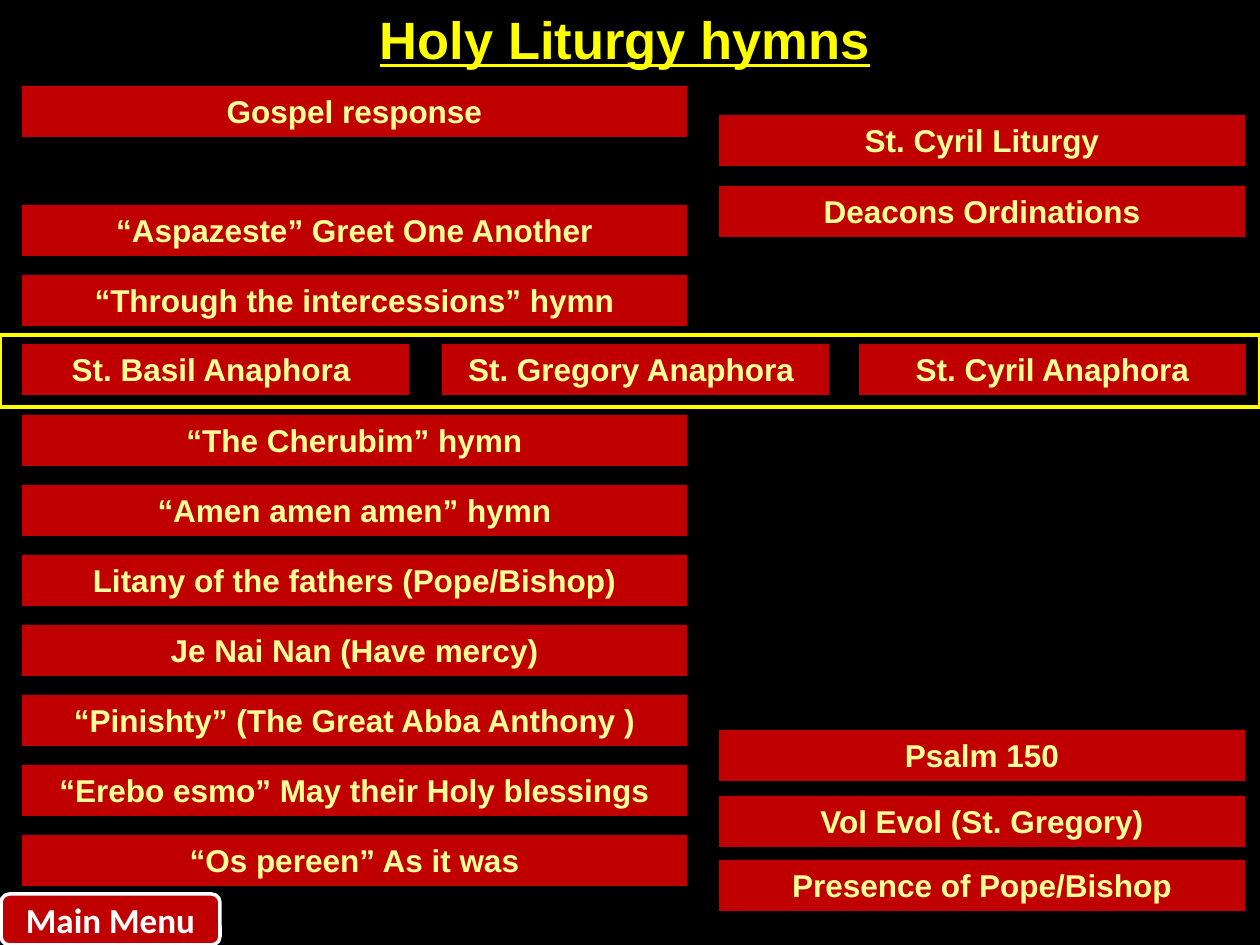
"""Build the menu slide of Holy Liturgy hymns."""
from pptx import Presentation
from pptx.dml.color import RGBColor
from pptx.enum.shapes import MSO_SHAPE
from pptx.enum.text import MSO_ANCHOR, PP_ALIGN
from pptx.util import Pt

PX = 914400 / 126
HEX = {"back": "000000", "red": "C00000", "cream": "FFFF99",
       "yellow": "FFFF00", "white": "FFFFFF"}
PLAIN = "{2D5ABB26-0587-4C30-8999-92F81FD0307C}"

TITLE = "Holy Liturgy hymns"
LEFT, WIDE, HIGH = 22, 665, 51
TOP, STEP = 205, 70
HYMNS = [
    "“Aspazeste” Greet One Another",
    "“Through the intercessions” hymn",
    None,
    "“The Cherubim” hymn",
    "“Amen amen amen” hymn",
    "Litany of the fathers (Pope/Bishop)",
    "Je Nai Nan (Have mercy)",
    "“Pinishty” (The Great Abba Anthony )",
    "“Erebo esmo” May their Holy blessings",
    "“Os pereen” As it was",
]
RIGHT, SIDE = 719, 526
EXTRAS = [
    ("St. Cyril Liturgy", 115),
    ("Deacons Ordinations", 186),
    ("Psalm 150", 730),
    ("Vol Evol (St. Gregory)", 796),
    ("Presence of Pope/Bishop", 860),
]
ROW, THIRD = 344, 387
RITES = [("St. Basil Anaphora ", 22), ("St. Gregory Anaphora ", 442),
         ("St. Cyril Anaphora", 859)]


def color(name):
    return RGBColor.from_string(HEX[name])


def emu(*sizes):
    return [round(size * PX) for size in sizes]


def write(frame, text, size, hue, font="Arial", under=None):
    frame.text = text
    para = frame.paragraphs[0]
    para.alignment = PP_ALIGN.CENTER
    face = para.runs[0].font
    face.name, face.size, face.bold = font, Pt(size), True
    face.underline = under
    face.color.rgb = color(hue)


def box(slide, kind, area, fill=None, line=None):
    shape = slide.shapes.add_shape(kind, *emu(*area))
    shape.shadow.inherit = False
    if fill:
        shape.fill.solid()
        shape.fill.fore_color.rgb = color(fill)
    else:
        shape.fill.background()
    if line:
        shape.line.color.rgb = color(line)
        shape.line.width = Pt(2)
    else:
        shape.line.fill.background()
    return shape


def button(slide, text, left, top, width):
    shape = box(slide, MSO_SHAPE.RECTANGLE, (left, top, width, HIGH), "red")
    shape.text_frame.word_wrap = True
    shape.text_frame.vertical_anchor = MSO_ANCHOR.TOP
    write(shape.text_frame, text, 18, "cream")


def title(slide):
    frame = slide.shapes.add_table(1, 1, *emu(44, 6, 1162, 110))
    table = frame.table
    table.first_row = table.horz_banding = False
    table._tbl.tblPr[0].text = PLAIN
    cell = table.cell(0, 0)
    cell.fill.background()
    write(cell.text_frame, TITLE, 30, "yellow", under=True)


def main():
    deck = Presentation()
    deck.slide_width, deck.slide_height = emu(1260, 945)
    slide = deck.slides.add_slide(deck.slide_layouts[6])
    slide.background.fill.solid()
    slide.background.fill.fore_color.rgb = color("back")

    box(slide, MSO_SHAPE.RECTANGLE, (0, 335, 1260, 72), line="yellow")
    title(slide)
    button(slide, "Gospel response", LEFT, 86, WIDE)
    for index, hymn in enumerate(HYMNS):
        if hymn:
            button(slide, hymn, LEFT, TOP + index * STEP, WIDE)
    for text, left in RITES:
        button(slide, text, left, ROW, THIRD)
    for text, top in EXTRAS:
        button(slide, text, RIGHT, top, SIDE)

    menu = box(slide, MSO_SHAPE.ROUNDED_RECTANGLE, (1, 894, 219, 51),
               "red", "white")
    menu.text_frame.vertical_anchor = MSO_ANCHOR.MIDDLE
    write(menu.text_frame, "Main Menu", 20, "white", "Calibri")
    deck.save("out.pptx")


if __name__ == "__main__":
    main()
